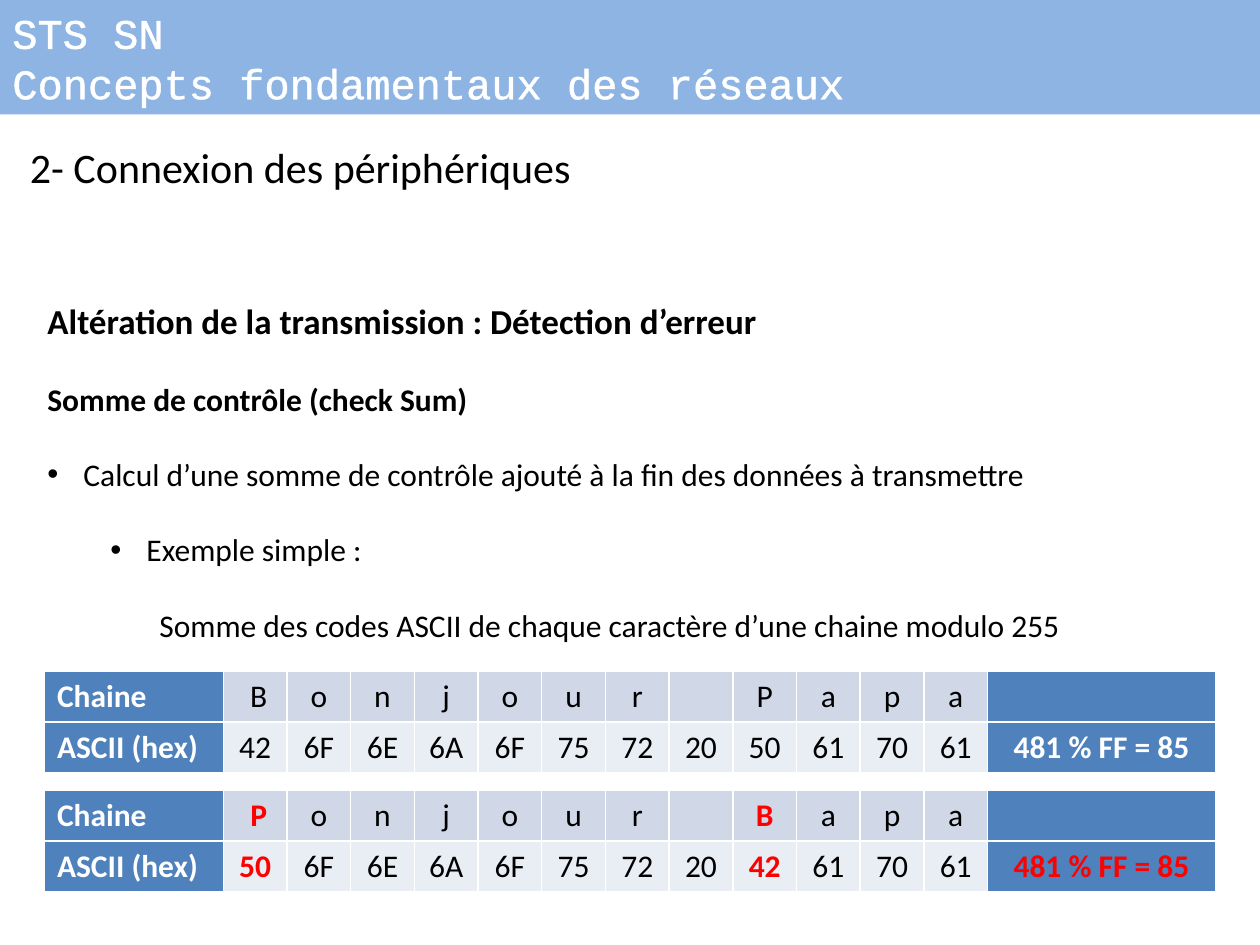
import pptx
import pptx.util
import pptx.dml.color
import pptx.enum.shapes
import pptx.enum.text
import pptx.oxml
import pptx.oxml.ns

Pt = pptx.util.Pt
ALIGN = pptx.enum.text.PP_ALIGN
ANCHOR = pptx.enum.text.MSO_ANCHOR
COLORS = {
    "banner": "8EB4E3",
    "white": "FFFFFF",
    "black": "000000",
    "red": "FF0000",
    "header": "4F81BD",
    "band_dark": "D0D8E8",
    "band_light": "E9EDF4",
}
CODES = ["42 ", "6F", "6E", "6A", "6F", "75", "72", "20", "50", "61", "70", "61"]
SWAPPED_CODES = ["50 ", *CODES[1:8], "42 ", *CODES[9:]]
RESULT = "481 % FF = 85"


def rgb(name):
    return pptx.dml.color.RGBColor.from_string(COLORS[name])


def set_attributes(target, values):
    for name, value in values.items():
        setattr(target, name, value)


def line_xml(tag, width, color):
    return pptx.oxml.parse_xml(
        f'<a:{tag} {pptx.oxml.ns.nsdecls("a")} w="{int(Pt(width))}">'
        f'<a:solidFill><a:srgbClr val="{COLORS[color]}"/></a:solidFill></a:{tag}>'
    )


def add_run(paragraph, text, size, color="black", bold=False, font="Calibri"):
    run = paragraph.add_run()
    run.text = text
    set_attributes(run.font, {"name": font, "size": Pt(size), "bold": bold})
    run.font.color.rgb = rgb(color)
    return run


def paragraph_at(frame, index):
    return frame.add_paragraph() if index else frame.paragraphs[0]


def add_banner(slide, box):
    shape = slide.shapes.add_shape(
        pptx.enum.shapes.MSO_SHAPE.RECTANGLE, *map(Pt, box))
    shape.shadow.inherit = False
    shape.fill.solid()
    shape.fill.fore_color.rgb = rgb("banner")
    shape.line.fill.background()
    shape.text_frame.vertical_anchor = ANCHOR.MIDDLE
    for index, text in enumerate(["STS SN", "Concepts fondamentaux des réseaux"]):
        paragraph = paragraph_at(shape.text_frame, index)
        paragraph.alignment = ALIGN.LEFT
        run = add_run(paragraph, text, 24, "white", font="Courier New")
        run.font._element.insert(0, line_xml("ln", 1.45, "white"))


def add_heading(slide, box, text, size, bold=False, wrap=True):
    frame = slide.shapes.add_textbox(*map(Pt, box)).text_frame
    frame.word_wrap = wrap
    add_run(frame.paragraphs[0], text, size, bold=bold)


def add_explanation(slide, box):
    lines = [
        ("Somme de contrôle (check Sum)", 0, False, True),
        ("Calcul d’une somme de contrôle ajouté à la fin des données à transmettre",
         20.6, True, False),
        ("Exemple simple :", 56.6, True, False),
        ("Somme des codes ASCII de chaque caractère d’une chaine modulo 255",
         64, False, False),
    ]
    frame = slide.shapes.add_textbox(*map(Pt, box)).text_frame
    frame.word_wrap = True
    for index, (text, margin, bullet, bold) in enumerate(lines):
        paragraph = paragraph_at(frame, index)
        if index:
            paragraph.space_before = Pt(21.5)
        properties = paragraph._p.get_or_add_pPr()
        properties.set("marL", str(int(Pt(margin))))
        properties.set("indent", str(int(Pt(-20.6 if bullet else 0))))
        if bullet:
            namespace = pptx.oxml.ns.nsdecls("a")
            properties.append(pptx.oxml.parse_xml(
                f'<a:buFont {namespace} typeface="Arial"/>'))
            properties.append(pptx.oxml.parse_xml(
                f'<a:buChar {namespace} char="•"/>'))
        add_run(paragraph, text, 18, bold=bold)


def format_cell(cell, text, fill, color, bold, centered):
    cell.fill.solid()
    cell.fill.fore_color.rgb = rgb(fill)
    properties = cell._tc.get_or_add_tcPr()
    for index, tag in enumerate(["lnL", "lnR", "lnT", "lnB"]):
        properties.insert(index, line_xml(tag, 1, "white"))
    if not centered:
        cell.vertical_anchor = ANCHOR.MIDDLE
    paragraph = cell.text_frame.paragraphs[0]
    paragraph.alignment = ALIGN.CENTER if centered else ALIGN.LEFT
    if text:
        add_run(paragraph, text, 18, color, bold)


def add_checksum_table(slide, box, letters, codes, changed=()):
    rows = [["Chaine", *letters, ""], ["ASCII (hex)", *codes, RESULT]]
    last = len(rows[0]) - 1
    table = slide.shapes.add_table(len(rows), last + 1, *map(Pt, box)).table
    for index, column in enumerate(table.columns):
        column.width = Pt({0: 102.2, last: 130.2}.get(index, 36.4))
    for row_index, (row, band) in enumerate(zip(rows, ["band_dark", "band_light"])):
        table.rows[row_index].height = Pt(box[3] / len(rows))
        for index, text in enumerate(row):
            edge = index in (0, last)
            color = "red" if index in changed else "white" if edge else "black"
            format_cell(table.cell(row_index, index), text,
                        "header" if edge else band, color,
                        edge or index in changed, index > 0)


def main():
    presentation = pptx.Presentation()
    set_attributes(presentation, {"slide_width": Pt(720), "slide_height": Pt(540)})
    slide = presentation.slides.add_slide(presentation.slide_layouts[6])
    add_banner(slide, (0, 0, 720, 65.4))
    add_heading(slide, (10, 77.2, 332, 36.4),
                "2- Connexion des périphériques", 24, wrap=False)
    add_heading(slide, (20, 167.8, 675, 31.5),
                "Altération de la transmission : Détection d’erreur", 20, bold=True)
    add_explanation(slide, (20, 213.4, 700, 225))
    letters = [" B", *"onjour", "", *"Papa"]
    swapped_letters = [" P", *"onjour", "", *"Bapa"]
    add_checksum_table(slide, (25.4, 383.4, 669.2, 58.4), letters, CODES)
    add_checksum_table(slide, (25.4, 451.4, 669.2, 58.4), swapped_letters,
                       SWAPPED_CODES, changed=(1, 9, 13))
    presentation.save("out.pptx")


if __name__ == "__main__":
    main()
